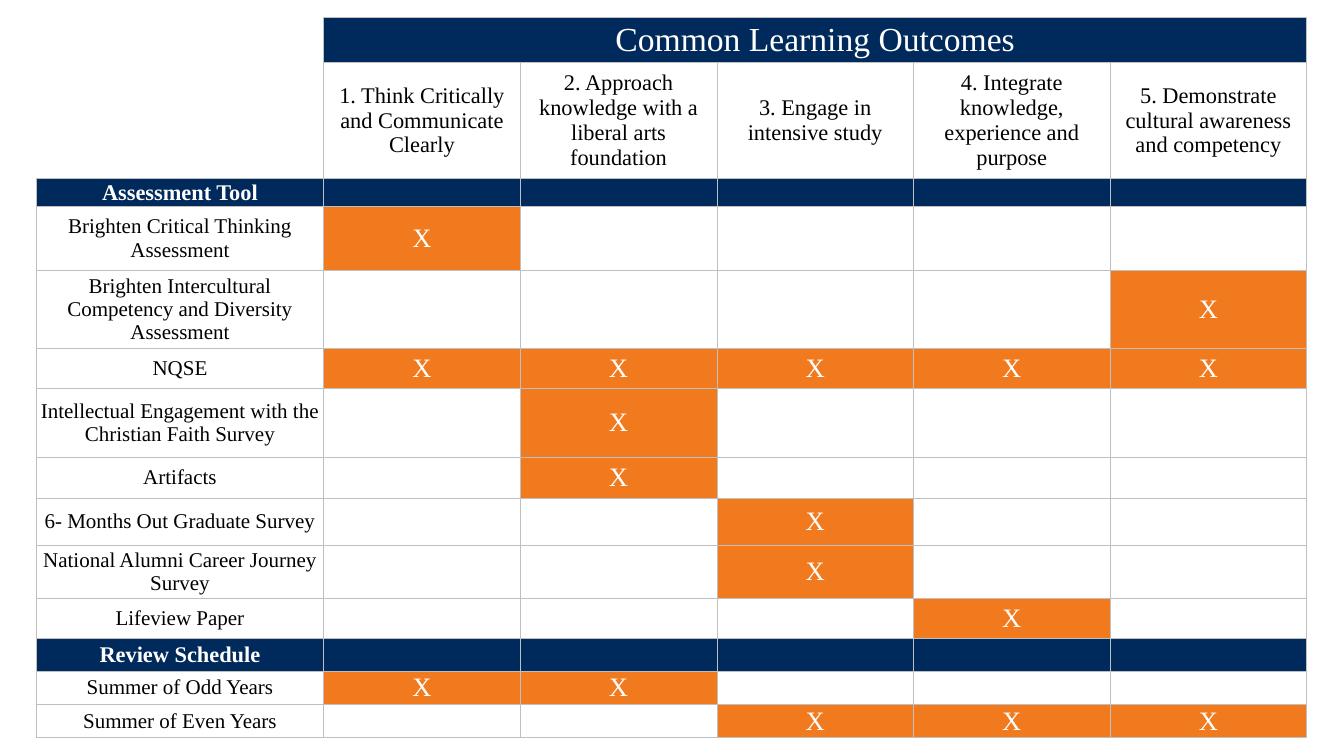
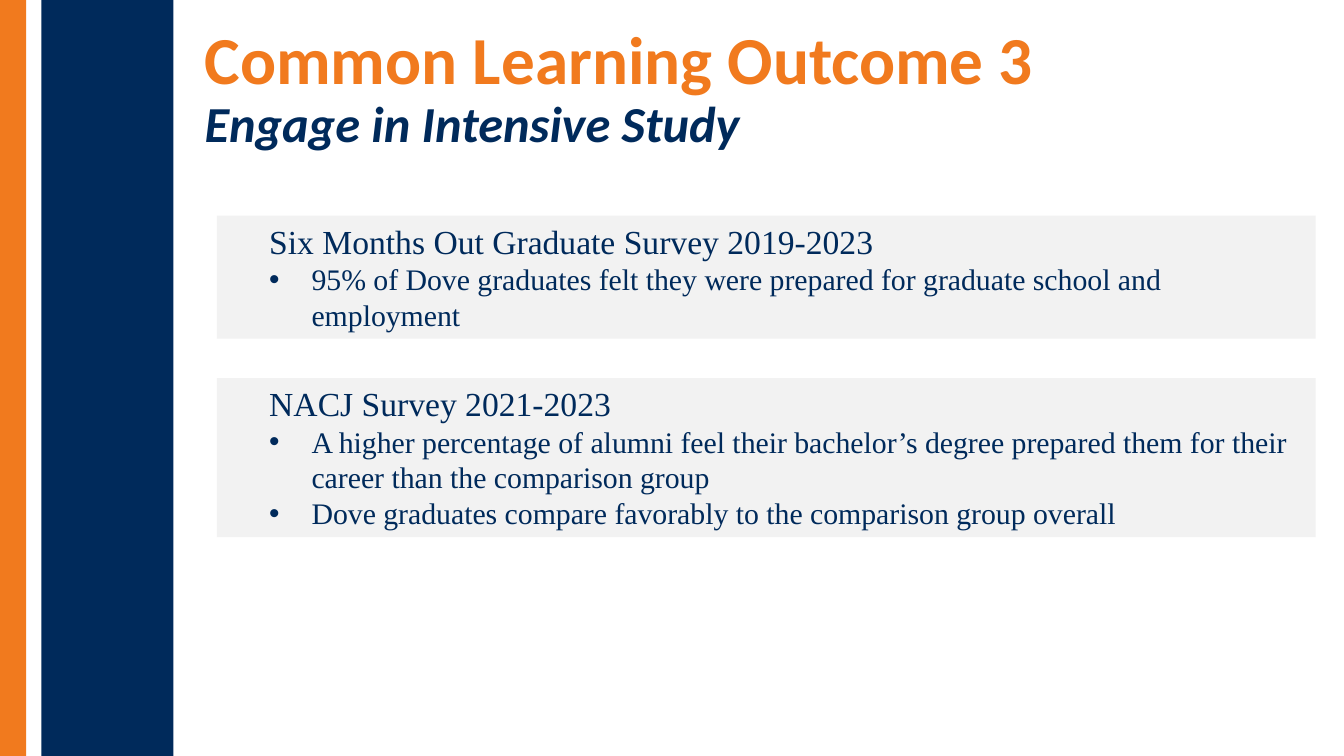
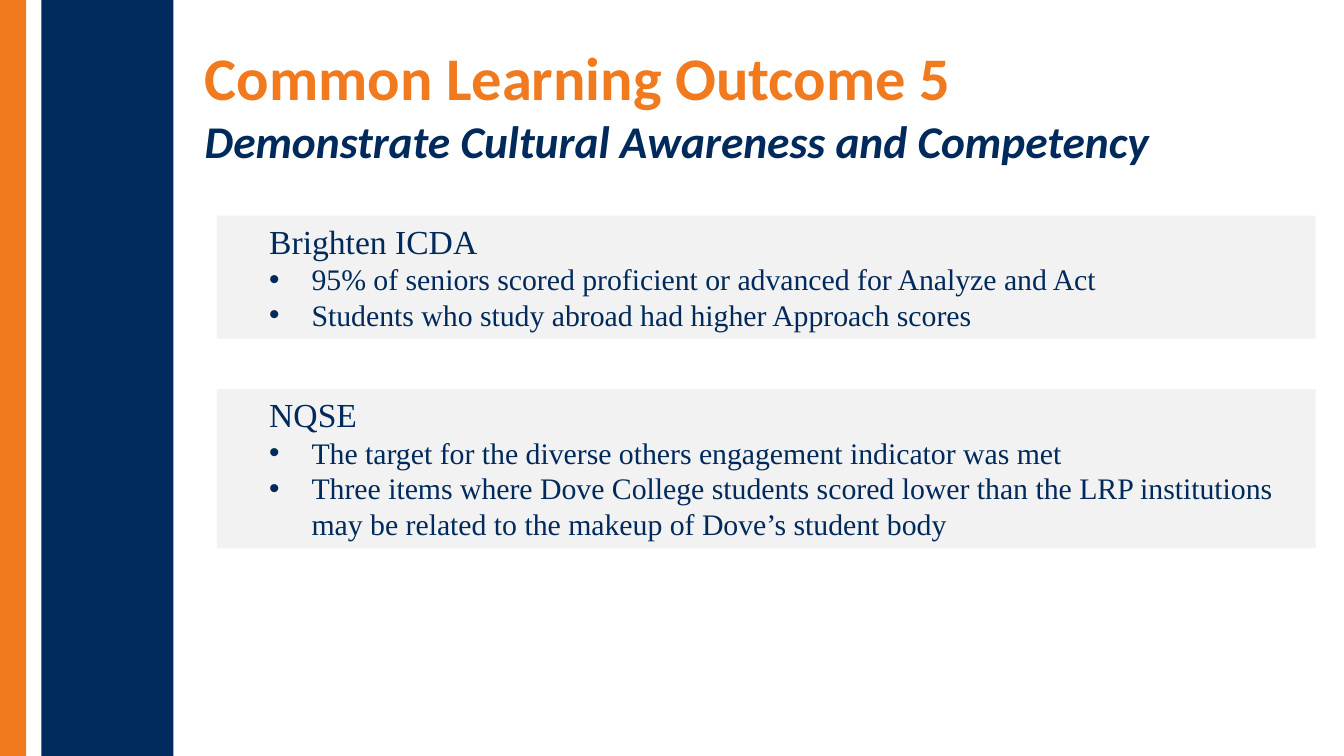
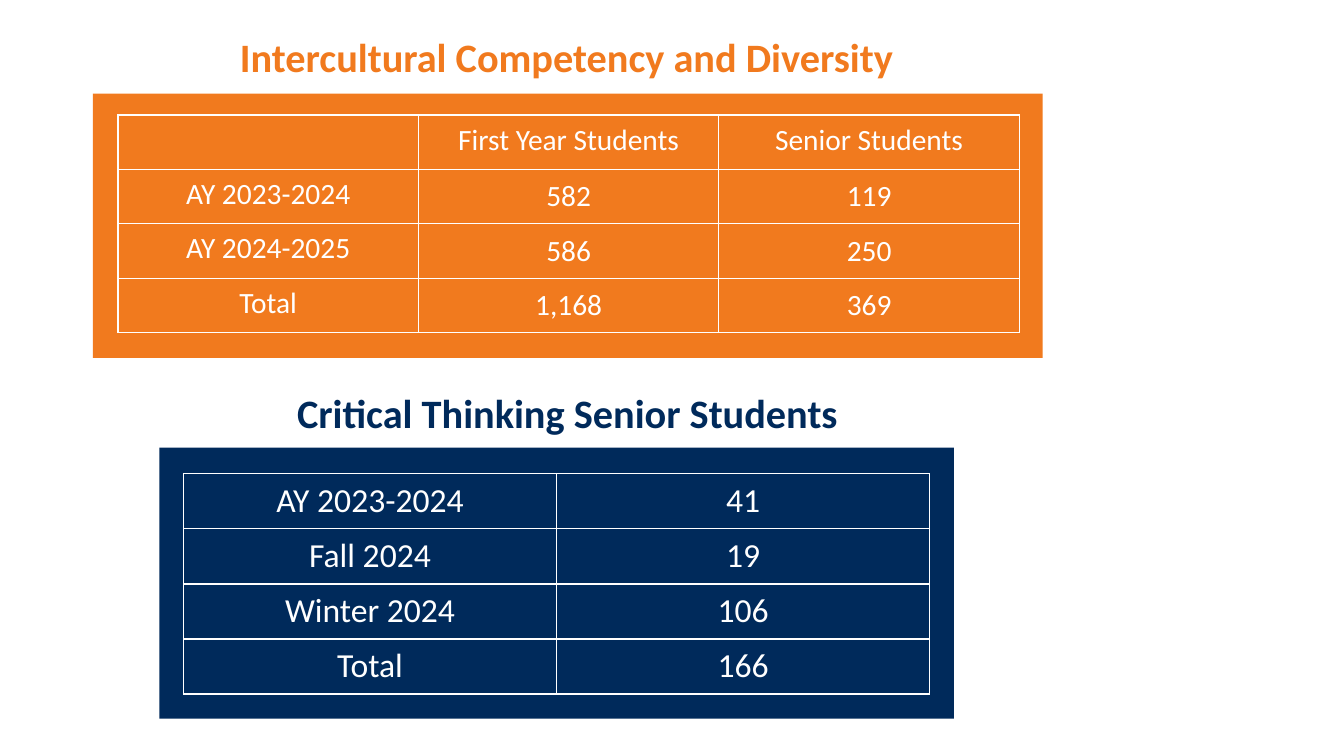
"""Build four slides on common learning outcomes and their assessment."""
from pptx import Presentation
from pptx import util as u
from pptx.dml.color import RGBColor
from pptx.enum import shapes, text
from pptx.oxml import ns
from lxml import etree

COLORS = {"navy": "002A5B", "orange": "F17A1E", "panel": "F2F2F2",
          "rule": "BFBFBF", "white": "FFFFFF", "black": "000000"}
SERIF, SANS = "Times New Roman", "Calibri"
TITLE_ONLY, TWO_CONTENT, BLANK = 5, 3, 6
TOP, MIDDLE, BOTTOM = text.MSO_ANCHOR.TOP, text.MSO_ANCHOR.MIDDLE, text.MSO_ANCHOR.BOTTOM
LEFT, CENTER = text.PP_ALIGN.LEFT, text.PP_ALIGN.CENTER

BANDS = [((0.41, 0, 1.31, 7.5), "navy"), ((0, 0, 0.26, 7.5), "orange")]

MATRIX_TITLE = "Common Learning Outcomes"
OUTCOMES = ["1. Think Critically and Communicate Clearly",
            "2. Approach knowledge with a liberal arts foundation",
            "3. Engage in intensive study",
            "4. Integrate knowledge, experience and purpose",
            "5. Demonstrate cultural awareness and competency"]
SECTION = None
MATRIX = [("Assessment Tool", 0.28, SECTION),
          ("Brighten Critical Thinking Assessment", 0.63, [1]),
          ("Brighten Intercultural Competency and Diversity Assessment", 0.78, [5]),
          ("NQSE", 0.39, [1, 2, 3, 4, 5]),
          ("Intellectual Engagement with the Christian Faith Survey", 0.69, [2]),
          ("Artifacts", 0.4, [2]),
          ("6- Months Out Graduate Survey", 0.47, [3]),
          ("National Alumni Career Journey Survey", 0.53, [3]),
          ("Lifeview Paper", 0.39, [4]),
          ("Review Schedule", 0.33, SECTION),
          ("Summer of Odd Years", 0.33, [1, 2]),
          ("Summer of Even Years", 0.33, [3, 4, 5])]

OUTCOME_SLIDES = [
    {"title": "Common Learning Outcome 3", "subtitle": "Engage in Intensive Study",
     "at": (1.9, 0, 8.7, 1.65), "sizes": (48, 36), "spacing": 0.9,
     "boxes": [
         (2.14, 1.22, "Six Months Out Graduate Survey 2019-2023",
          ["95% of Dove graduates felt they were prepared for graduate school and employment"]),
         (3.75, 1.58, "NACJ Survey 2021-2023",
          ["A higher percentage of alumni feel their bachelor’s degree prepared them for their "
           "career than the comparison group",
           "Dove graduates compare favorably to the comparison group overall"])]},
    {"title": "Common Learning Outcome 5",
     "subtitle": "Demonstrate Cultural Awareness and Competency",
     "at": (1.9, 0.14, 9.81, 1.65), "sizes": (43.2, 32.4), "spacing": 1.0,
     "boxes": [
         (2.14, 1.22, "Brighten ICDA",
          ["95% of seniors scored proficient or advanced for Analyze and Act",
           "Students who study abroad had higher Approach scores"]),
         (3.86, 1.58, "NQSE",
          ["The target for the diverse others engagement indicator was met",
           "Three items where Dove College students scored lower than the LRP institutions "
           "may be related to the makeup of Dove’s student body"])]}]

COUNTS = [
    {"heading": "Intercultural Competency and Diversity", "color": "orange",
     "heading_at": (1.15, 0.27, 8.94, 0.66), "panel_at": (0.92, 0.93, 9.42, 2.62),
     "table_at": (1.17, 1.14), "column": 2.98, "size": 21, "value_anchor": MIDDLE,
     "rows": [("", "First Year Students", "Senior Students"),
              ("AY 2023-2024", "582", "119"),
              ("AY 2024-2025", "586", "250"),
              ("Total", "1,168", "369")]},
    {"heading": "Critical Thinking Senior Students", "color": "navy",
     "heading_at": (1.16, 3.8, 8.94, 0.66), "panel_at": (1.58, 4.44, 7.88, 2.69),
     "table_at": (1.82, 4.7), "column": 3.7, "size": 24, "value_anchor": TOP,
     "rows": [("AY 2023-2024", "41"), ("Fall 2024", "19"),
              ("Winter 2024", "106"), ("Total", "166")]}]


def rgb(name):
    return RGBColor.from_string(COLORS[name])


def inches(values):
    return [u.Inches(v) for v in values]


def style_run(r, size, font, color, bold=False, italic=False):
    f = r.font
    f.size, f.name, f.bold, f.italic = u.Pt(size), font, bold, italic
    f.color.rgb = rgb(color)


def place(sp, at):
    sp.left, sp.top, sp.width, sp.height = inches(at)


def add_rect(s, at, color):
    sp = s.shapes.add_shape(shapes.MSO_SHAPE.RECTANGLE, *inches(at))
    sp.shadow.inherit = False
    sp.fill.solid()
    sp.fill.fore_color.rgb = rgb(color)
    sp.line.fill.background()


def heading_paragraph(sp, at, align, spacing):
    place(sp, at)
    tf = sp.text_frame
    tf.word_wrap, tf.auto_size, tf.vertical_anchor = True, text.MSO_AUTO_SIZE.NONE, BOTTOM
    tf.margin_left = tf.margin_right = tf.margin_top = tf.margin_bottom = u.Inches(0.13)
    p = tf.paragraphs[0]
    p.alignment, p.line_spacing = align, spacing
    return p


def add_run(p, words, *style):
    r = p.add_run()
    r.text = words
    style_run(r, *style)


def set_bullet(p, margin, indent, bullet):
    pPr = p._p.get_or_add_pPr()
    pPr.set("marL", str(u.Inches(margin)))
    pPr.set("indent", str(u.Inches(indent)))
    if bullet:
        etree.SubElement(pPr, ns.qn("a:buFont"), typeface="Arial")
        etree.SubElement(pPr, ns.qn("a:buChar"), char="•")
    else:
        etree.SubElement(pPr, ns.qn("a:buNone"))


def fill_box(sp, top, height, heading, points):
    place(sp, (2.15, top, 10.9, height))
    sp.fill.solid()
    sp.fill.fore_color.rgb = rgb("panel")
    tf = sp.text_frame
    tf.text = "\n".join([heading] + points)
    tf.auto_size, tf.vertical_anchor = text.MSO_AUTO_SIZE.NONE, TOP
    for i, p in enumerate(tf.paragraphs):
        p.space_before = u.Pt(0)
        p.alignment = LEFT
        set_bullet(p, 0.84 if i else 0.42, -0.42 if i else 0, i > 0)
        style_run(p.runs[0], 21.3 if i else 24, SERIF, "navy")


def add_table(s, left, top, widths, heights):
    frame = s.shapes.add_table(len(heights), len(widths),
                               *inches((left, top, sum(widths), sum(heights))))
    table = frame.table
    table.first_row = table.horz_banding = False
    for column, width in zip(table.columns, widths):
        column.width = u.Inches(width)
    for row, height in zip(table.rows, heights):
        row.height = u.Inches(height)
    return table


def set_borders(cell, color, width, edges):
    tcPr = cell._tc.get_or_add_tcPr()
    for edge in "LRTB":
        ln = etree.SubElement(tcPr, ns.qn("a:ln" + edge), w=str(u.Pt(width)))
        if edge in edges:
            fill = etree.SubElement(ln, ns.qn("a:solidFill"))
            etree.SubElement(fill, ns.qn("a:srgbClr"), val=COLORS[color])
        else:
            etree.SubElement(ln, ns.qn("a:noFill"))


def fill_cell(cell, words, size, font, color, rule, insets, bold=False,
              fill=None, anchor=MIDDLE, edges="LRTB"):
    set_borders(cell, *rule, edges)
    if fill:
        cell.fill.solid()
        cell.fill.fore_color.rgb = rgb(fill)
    else:
        cell.fill.background()
    cell.vertical_anchor = anchor
    cell.margin_left = cell.margin_right = u.Inches(insets[0])
    cell.margin_top = cell.margin_bottom = u.Inches(insets[1])
    p = cell.text_frame.paragraphs[0]
    p.alignment = CENTER
    if words:
        add_run(p, words, size, font, color, bold)
    else:
        etree.SubElement(p._p, ns.qn("a:endParaRPr"), sz="1000")


def add_matrix_slide(prs):
    s = prs.slides.add_slide(prs.slide_layouts[BLANK])
    table = add_table(s, 0.36, 0.17, [2.85] + [1.95] * len(OUTCOMES),
                      [0.45, 1.15] + [height for _, height, _ in MATRIX])
    shared = {"font": SERIF, "rule": ("rule", 0.5), "insets": (0.01, 0.01)}
    table.cell(0, 1).merge(table.cell(0, len(OUTCOMES)))
    fill_cell(table.cell(0, 0), "", 16, color="black", edges="R", **shared)
    fill_cell(table.cell(1, 0), "", 16, color="black", edges="RB", **shared)
    for c, outcome in enumerate(OUTCOMES, 1):
        fill_cell(table.cell(0, c), MATRIX_TITLE if c == 1 else "", 24,
                  color="white", fill="navy", **shared)
        fill_cell(table.cell(1, c), outcome, 16, color="black", **shared)
    for i, (label, _, marks) in enumerate(MATRIX, 2):
        section = marks is SECTION
        fill_cell(table.cell(i, 0), label, 16 if section else 15,
                  color="white" if section else "black", bold=section,
                  fill="navy" if section else None, **shared)
        for c in range(1, len(OUTCOMES) + 1):
            marked = not section and c in marks
            fill = "navy" if section else "orange" if marked else None
            fill_cell(table.cell(i, c), "X" if marked else "", 19,
                      color="white", fill=fill, **shared)


def add_outcome_slide(prs, outcome):
    s = prs.slides.add_slide(prs.slide_layouts[TWO_CONTENT])
    for at, color in BANDS:
        add_rect(s, at, color)
    p = heading_paragraph(s.shapes.title, outcome["at"], LEFT, outcome["spacing"])
    add_run(p, outcome["title"], outcome["sizes"][0], SANS, "orange", True)
    p.add_line_break()
    add_run(p, outcome["subtitle"], outcome["sizes"][1], SANS, "navy", True, True)
    for idx, box in enumerate(outcome["boxes"], 1):
        fill_box(s.placeholders[idx], *box)


def add_counts_slide(prs):
    s = prs.slides.add_slide(prs.slide_layouts[TITLE_ONLY])
    for i, group in enumerate(COUNTS):
        add_rect(s, group["panel_at"], group["color"])
        at = group["heading_at"]
        sp = s.shapes.add_textbox(*inches(at)) if i else s.shapes.title
        p = heading_paragraph(sp, at, CENTER, 0.8)
        add_run(p, group["heading"], 28.8, SANS, group["color"], True)
        rows = group["rows"]
        table = add_table(s, *group["table_at"], [group["column"]] * len(rows[0]),
                          [0.54] * len(rows))
        for y, row in enumerate(rows):
            for x, words in enumerate(row):
                fill_cell(table.cell(y, x), words, group["size"], SANS, "white",
                          ("white", 1), (0.13, 0.07),
                          anchor=group["value_anchor"] if x and y else TOP)


def main():
    prs = Presentation()
    prs.slide_width, prs.slide_height = inches((13.33, 7.5))
    add_matrix_slide(prs)
    for outcome in OUTCOME_SLIDES:
        add_outcome_slide(prs, outcome)
    add_counts_slide(prs)
    prs.save("out.pptx")


if __name__ == "__main__":
    main()
